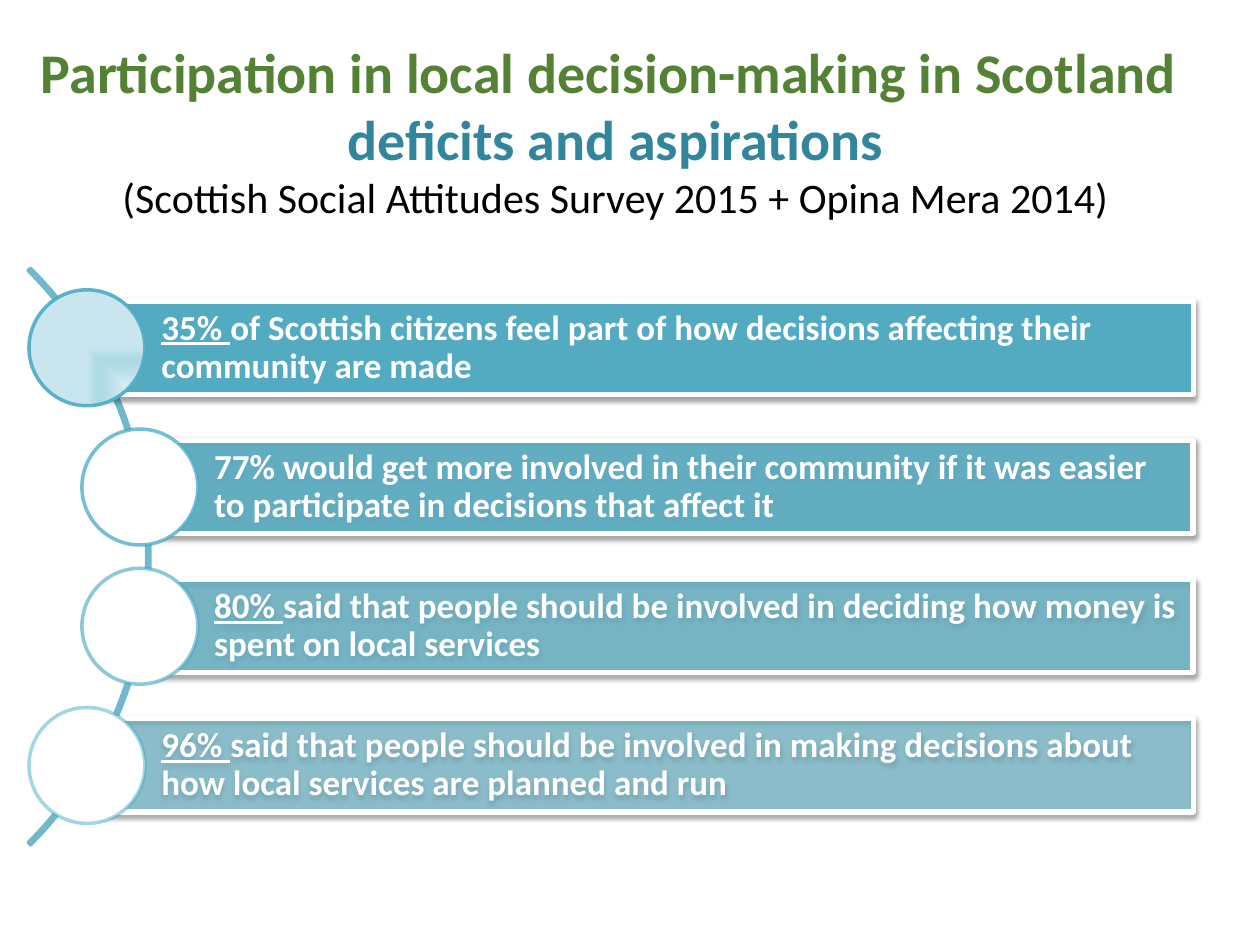
from copy import deepcopy
from pptx import Presentation
from pptx.dml.color import RGBColor
from pptx.enum.shapes import MSO_SHAPE as Shape
from pptx.enum.text import MSO_ANCHOR as Anchor, MSO_AUTO_SIZE as Fit, PP_ALIGN as Align
from pptx.oxml import parse_xml
from pptx.oxml.ns import nsdecls, qn
from pptx.util import Inches, Pt

FONT, TEAL, WHITE = "Calibri", "4BACC6", "FFFFFF"
TOP, STEP, BAR = 2.39, 1.105, 0.74    # rows of the list
LEFT, INDENT, RIGHT = 0.69, 0.42, 9.47
DISC = 0.92

# figure, rest of the sentence, indent level, opacity, underlined figure
ROWS = [
    ("35% ", "of Scottish citizens feel part of how decisions affecting "
     "their community are made", 0, 90, True),
    ("77% ", "would get more involved in their community if it was easier "
     "to participate in decisions that affect it", 1, 77, False),
    ("80% ", "said that people should be involved in deciding how money is "
     "spent on local services", 1, 63, True),
    ("96% ", "said that people should be involved in making decisions about "
     "how local services are planned and run", 0, 50, True),
]
TITLE = [
    ("Participation in local decision-making in Scotland ", 32, "548235", True),
    ("deficits and aspirations", 32, "31859C", True),
    ("(Scottish Social Attitudes Survey 2015 + Opina Mera 2014)", 24, "000000", False),
]
STOPS = [(0, "F6FBFC"), (74, "AEDAE5"), (83, "AEDAE5"), (100, "C9E6EE")]


def paint(color, hue, alpha=100):
    """Set a colour from a hex string, with opacity in percent."""
    color.rgb = RGBColor.from_string(hue)


def fade(fill, alpha):
    """Give a solid a:solidFill element an opacity in percent."""
    fill[0].append(parse_xml(f'<a:alpha {nsdecls("a")} val="{alpha * 1000}"/>'))


def style(run, size, hue, bold):
    font = run.font
    font.name, font.size, font.bold = FONT, Pt(size), bold
    paint(font.color, hue)


def add_shape(slide, kind, box, hue, width):
    """Add an outlined shape without fill or shadow."""
    shape = slide.shapes.add_shape(kind, *map(Inches, box))
    shape.shadow.inherit = False
    shape.fill.background()
    shape.line.width = Pt(width)
    paint(shape.line.color, hue)
    return shape


def add_arc(slide):
    size = 6.47
    middle = TOP + (3 * STEP + BAR) / 2
    arc = add_shape(slide, Shape.BLOCK_ARC, (-5.28, middle - size / 2, size, size),
                    "71B7CD", 2)
    for i, value in enumerate((189, 27, 0.004)):
        arc.adjustments[i] = value


def add_bar(slide, left, top, figure, words, alpha, under):
    bar = add_shape(slide, Shape.RECTANGLE, (left, top, RIGHT - left, BAR), WHITE, 3)
    bar.fill.solid()
    paint(bar.fill.fore_color, TEAL)
    props = bar._element.spPr
    fade(props.find(qn("a:solidFill")), alpha)
    props.find(qn("a:effectLst")).append(parse_xml(
        f'<a:outerShdw {nsdecls("a")} blurRad="{Pt(3.1)}" dist="{Pt(1.6)}" '
        'dir="5400000" rotWithShape="0"><a:srgbClr val="000000">'
        '<a:alpha val="38000"/></a:srgbClr></a:outerShdw>'))

    # Text on the bar
    frame = bar.text_frame
    frame.word_wrap, frame.vertical_anchor = True, Anchor.MIDDLE
    frame.margin_left = Inches(0.59)
    frame.margin_top = frame.margin_right = frame.margin_bottom = Inches(0.06)
    para = frame.paragraphs[0]
    para.alignment, para.line_spacing = Align.LEFT, 0.9
    for text, line in ((figure, under), (words, False)):
        run = para.add_run()
        run.text = text
        style(run, 20, WHITE, True)
        run.font.underline = line


def add_disc(slide, left, top, alpha, shaded):
    disc = add_shape(slide, Shape.OVAL, (left, top, DISC, DISC), TEAL, 2)
    props = disc._element.spPr
    fade(props.find(qn("a:ln")).find(qn("a:solidFill")), alpha)
    if not shaded:
        disc.fill.solid()
        paint(disc.fill.fore_color, WHITE)
        return
    # Gradient towards the lower right corner
    stops = "".join(f'<a:gs pos="{pos * 1000}"><a:srgbClr val="{hue}"/></a:gs>'
                    for pos, hue in STOPS)
    props.replace(props.find(qn("a:noFill")), parse_xml(
        f'<a:gradFill {nsdecls("a")} rotWithShape="1"><a:gsLst>{stops}</a:gsLst>'
        '<a:path path="rect"><a:fillToRect l="100000" t="100000"/></a:path>'
        '</a:gradFill>'))


def set_title(slide):
    title = slide.shapes.title
    title.left, title.top, title.width, title.height = map(Inches, (0, 0.38, 9.77, 1.3))
    frame = title.text_frame
    frame.word_wrap, frame.auto_size = True, Fit.NONE
    frame.vertical_anchor = Anchor.MIDDLE
    para = frame.paragraphs[0]
    para.text = "\v".join(row[0] for row in TITLE)
    para.alignment = Align.CENTER
    for run, (_, size, hue, bold) in zip(para.runs, TITLE):
        style(run, size, hue, bold)
    # Line breaks take the size of the run before them
    for gap in para._p.findall(qn("a:br")):
        gap.append(deepcopy(gap.getprevious().find(qn("a:rPr"))))


def main():
    deck = Presentation()
    deck.slide_width, deck.slide_height = Inches(10), Inches(7.5)
    slide = deck.slides.add_slide(deck.slide_layouts[5])
    set_title(slide)
    add_arc(slide)
    for i, (figure, words, level, alpha, under) in enumerate(ROWS):
        left, top = LEFT + level * INDENT, TOP + i * STEP
        add_bar(slide, left, top, figure, words, alpha, under)
        add_disc(slide, left - DISC / 2, top + (BAR - DISC) / 2, alpha, i == 0)
    deck.save("out.pptx")


if __name__ == "__main__":
    main()
